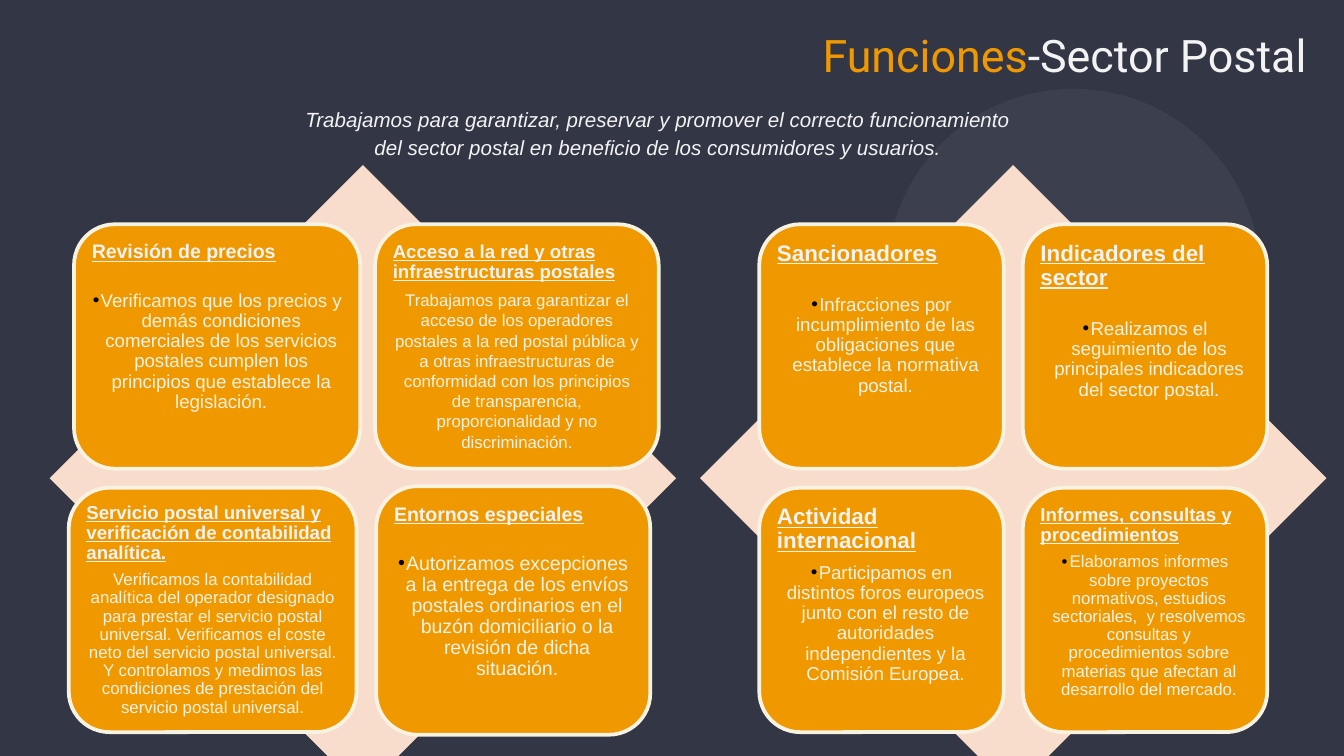
from lxml.etree import SubElement
from pptx import Presentation
from pptx.dml.color import RGBColor
from pptx.enum.shapes import MSO_SHAPE as Shape
from pptx.enum.text import MSO_ANCHOR as Anchor, PP_ALIGN as Align
from pptx.oxml.ns import qn
from pptx.util import Cm, Pt

NAVY, CIRCLE, ORANGE = "333644", "3C3F4E", "F09800"
PEACH, CREAM, WHITE = "F9DDCC", "F7F2E2", "F3F3F3"

# Content
TITLE = [("Funciones", ORANGE), ("-Sector Postal", WHITE)]
SUBTITLE = [
    "Trabajamos para garantizar, preservar y promover el correcto funcionamiento",
    "del sector postal en beneficio de los consumidores y usuarios.",
]

# Cards: heading, heading size, gap below, body, body size, bullet, line spacing
PRICES = ("Revisión de precios", 10.5, 15,
          "Verificamos que los precios y demás condiciones comerciales de los servicios "
          "postales cumplen los principios que establece la legislación.", 10, True, 0.9)
ACCESS = ("Acceso a la red y otras infraestructuras postales", 10, 4,
          "Trabajamos para garantizar el acceso de los operadores postales a la red postal "
          "pública y a otras infraestructuras de conformidad con los principios de "
          "transparencia, proporcionalidad y no discriminación.", 9, False, 1.0)
UNIVERSAL = ("Servicio postal universal y verificación de contabilidad analítica.", 10, 4,
             "Verificamos la contabilidad analítica del operador designado para prestar el "
             "servicio postal universal. Verificamos el coste neto del servicio postal "
             "universal. Y controlamos y medimos las condiciones de prestación del servicio "
             "postal universal.", 9, False, 0.9)
SPECIAL = ("Entornos especiales", 10.5, 15,
           "Autorizamos excepciones a la entrega de los envíos postales ordinarios en el "
           "buzón domiciliario o la revisión de dicha situación.", 10.5, True, 0.9)
SANCTIONS = ("Sancionadores", 12, 15.5,
             "Infracciones por incumplimiento de las obligaciones que establece la "
             "normativa postal.", 10, True, 0.9)
INDICATORS = ("Indicadores del sector", 12, 15.5,
              "Realizamos el seguimiento de los principales indicadores del sector postal.",
              10, True, 0.9)
INTERNATIONAL = ("Actividad internacional", 12, 5,
                 "Participamos en distintos foros europeos junto con el resto de autoridades "
                 "independientes y la Comisión Europea.", 10, True, 0.9)
REPORTS = ("Informes, consultas y procedimientos", 10, 4,
           "Elaboramos informes sobre proyectos normativos, estudios sectoriales,  y "
           "resolvemos consultas y procedimientos sobre materias que afectan al desarrollo "
           "del mercado.", 9, True, 0.9)

# Layout in cm: the left cards vary in size, the right ones form a square grid
DIAMOND_LEFTS, DIAMOND_TOP, DIAMOND_SIZE = (0.94, 13.23), 3.12, 11.84
GRID_LEFT, GRID_TOP, GRID_STEP, CARD_SIZE = 14.35, 4.24, 4.98, 4.62
LEFT_CARDS = [
    (PRICES, (1.4, 4.24, 5.41, 4.62), Anchor.TOP),
    (ACCESS, (7.09, 4.24, 5.36, 4.62), Anchor.TOP),
    (UNIVERSAL, (1.3, 9.22, 5.44, 4.62), Anchor.MIDDLE),
    (SPECIAL, (7.11, 9.19, 5.18, 4.7), Anchor.TOP),
]
RIGHT_CARDS = [SANCTIONS, INDICATORS, INTERNATIONAL, REPORTS]


def rgb(color):
    return RGBColor.from_string(color)


def add_run(paragraph, text, size, color, font="Arial", **style):
    run = paragraph.add_run()
    run.text = text
    run.font.name, run.font.size = font, Pt(size)
    run.font.color.rgb = rgb(color)
    for name, value in style.items():
        setattr(run.font, name, value)


def set_frame(frame, inset, anchor=Anchor.TOP):
    frame.word_wrap = True
    frame.vertical_anchor = anchor
    frame.margin_left = frame.margin_right = Cm(inset)
    frame.margin_top = frame.margin_bottom = Cm(inset)
    return frame.paragraphs[0]


def add_shape(kind, box, fill, line=None):
    shape = slide.shapes.add_shape(kind, *map(Cm, box))
    shape.shadow.inherit = False
    shape.fill.solid()
    shape.fill.fore_color.rgb = rgb(fill)
    if line:
        shape.line.color.rgb = rgb(line)
        shape.line.width = Pt(2)
    else:
        shape.line.fill.background()
    return shape


def add_text_box(box):
    text_box = slide.shapes.add_textbox(*map(Cm, box))
    paragraph = set_frame(text_box.text_frame, 0.25)
    paragraph.alignment = Align.CENTER
    return paragraph


def add_bullet(paragraph):
    properties = paragraph._p.get_or_add_pPr()
    properties.set("marL", str(Cm(0.15)))
    properties.set("indent", str(-Cm(0.15)))
    color = SubElement(properties, qn("a:buClr"))
    SubElement(color, qn("a:srgbClr"), val="000000")
    SubElement(properties, qn("a:buFont"), typeface="Arial")
    SubElement(properties, qn("a:buChar"), char="•")


def add_card(content, box, anchor=Anchor.TOP):
    heading, heading_size, gap, body, body_size, bullet, spacing = content
    frame = add_shape(Shape.ROUNDED_RECTANGLE, box, ORANGE, CREAM).text_frame
    paragraph = set_frame(frame, 0.11, anchor)
    paragraph.alignment = Align.LEFT
    paragraph.line_spacing = 0.9
    paragraph.space_after = Pt(gap)
    add_run(paragraph, heading, heading_size, WHITE, bold=True, underline=True)

    paragraph = frame.add_paragraph()
    if bullet:
        add_bullet(paragraph)
    paragraph.alignment = Align.CENTER
    paragraph.line_spacing = spacing
    add_run(paragraph, body, body_size, CREAM)


presentation = Presentation()
presentation.slide_width, presentation.slide_height = Cm(25.4), Cm(14.29)
slide = presentation.slides.add_slide(presentation.slide_layouts[6])
slide.background.fill.solid()
slide.background.fill.fore_color.rgb = rgb(NAVY)

# Background circle
add_shape(Shape.OVAL, (16.76, 1.68, 7.06, 7.06), CIRCLE)

# Subtitle and title
subtitle = add_text_box((2.57, 1.7, 19.3, 1.83))
subtitle._p.get_or_add_pPr().set("marL", str(Cm(0.43)))
subtitle.line_spacing = 1.15
for index, line in enumerate(SUBTITLE):
    if index:
        subtitle.add_line_break()
    add_run(subtitle, line, 11, WHITE, italic=True)

title = add_text_box((10.72, 0.28, 18.8, 1.83))
for text, color in TITLE:
    add_run(title, text, 24, color, "Roboto")

# Diamonds behind the cards
for left in DIAMOND_LEFTS:
    add_shape(Shape.DIAMOND, (left, DIAMOND_TOP, DIAMOND_SIZE, DIAMOND_SIZE), PEACH)

# Cards
for content, box, anchor in LEFT_CARDS:
    add_card(content, box, anchor)
for index, content in enumerate(RIGHT_CARDS):
    row, column = divmod(index, 2)
    add_card(content, (GRID_LEFT + column * GRID_STEP, GRID_TOP + row * GRID_STEP,
                       CARD_SIZE, CARD_SIZE))

presentation.save("out.pptx")
